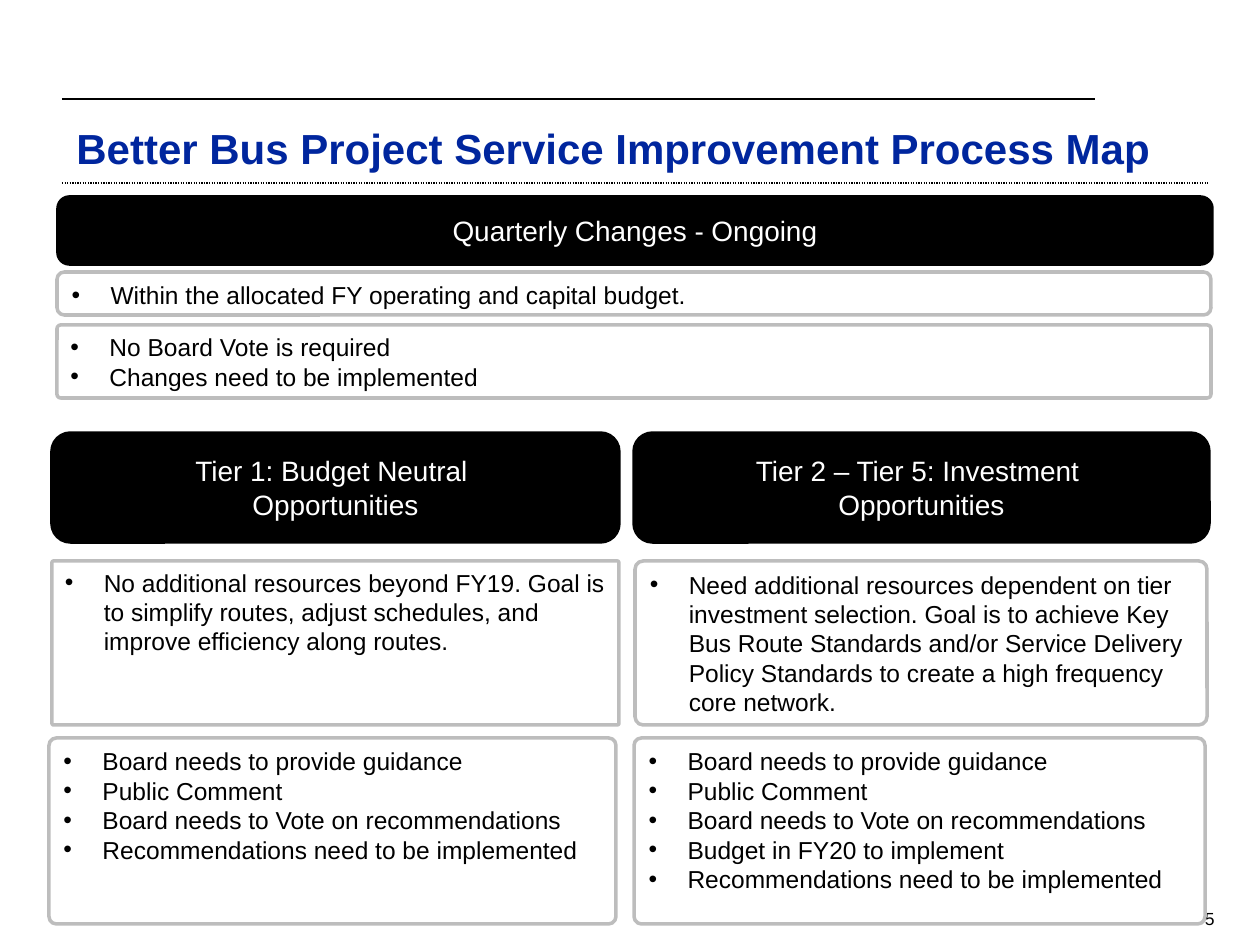
from dataclasses import dataclass

from lxml import etree
from pptx import Presentation
from pptx import util as u
from pptx.dml.color import RGBColor
from pptx.enum import dml, shapes, text
from pptx.oxml import ns

PX = 914400 / 126  # EMU in one px


@dataclass(frozen=True)
class Theme:
    font: str = "Arial"
    black: str = "000000"
    white: str = "FFFFFF"
    blue: str = "00269E"
    grey: str = "BDBDBD"
    title_pt: int = 24
    header_pt: int = 16
    body_pt: int = 14
    number_pt: int = 10
    border_pt: int = 2


@dataclass(frozen=True)
class Box:
    left: int
    top: int
    width: int
    height: int
    lines: tuple[str, ...]
    corner: float = 0.17


THEME = Theme()
INDENT = 39
HALF_WIDTH = 567

HEADERS = (
    Box(58, 197, 1154, 67, ("Quarterly Changes - Ongoing",)),
    Box(52, 433, HALF_WIDTH, 109, ("Tier 1: Budget Neutral ", "Opportunities")),
    Box(634, 433, 575, 109, ("Tier 2 – Tier 5: Investment ", "Opportunities")),
)

BOARD_STEPS = (
    "Board needs to provide guidance",
    "Public Comment",
    "Board needs to Vote on recommendations",
)
LAST_STEP = "Recommendations need to be implemented"

DETAILS = (
    # Quarterly changes
    Box(57, 325, 1154, 73,
        ("No Board Vote is required", "Changes need to be implemented"), 0.05),
    Box(57, 272, 1154, 43,
        ("Within the allocated FY operating and capital budget.",)),
    # Tier 1
    Box(52, 561, HALF_WIDTH, 164,
        ("No additional resources beyond FY19. Goal is to simplify routes, "
         "adjust schedules, and improve efficiency along routes.",), 0.01),
    Box(49, 738, HALF_WIDTH, 186, (*BOARD_STEPS, LAST_STEP), 0.04),
    # Tier 2 to tier 5
    Box(635, 561, 572, 164,
        ("Need additional resources dependent on tier investment selection. "
         "Goal is to achieve Key Bus Route Standards and/or Service Delivery "
         "Policy Standards to create a high frequency core network.",), 0.05),
    Box(634, 738, 571, 186,
        (*BOARD_STEPS, "Budget in FY20 to implement", LAST_STEP), 0.04),
)


def px(length: int) -> u.Emu:
    return u.Emu(round(length * PX))


def color(value: str) -> RGBColor:
    return RGBColor.from_string(value)


def add_bullet(paragraph) -> None:
    properties = paragraph._p.get_or_add_pPr()
    properties.set("marL", str(px(INDENT)))
    properties.set("indent", str(-px(INDENT)))
    etree.SubElement(properties, ns.qn("a:buFont"), typeface=THEME.font)
    etree.SubElement(properties, ns.qn("a:buChar"), char="•")


def write(frame, lines: tuple[str, ...], size: int, ink: str, align, anchor,
          bold: bool = False, bullets: bool = False) -> None:
    frame.word_wrap = True
    frame.vertical_anchor = anchor
    for index, line in enumerate(lines):
        paragraph = frame.paragraphs[0] if index == 0 else frame.add_paragraph()
        paragraph.text = line
        paragraph.alignment = align
        if bullets:
            add_bullet(paragraph)
        font = paragraph.font
        font.name, font.size, font.bold = THEME.font, u.Pt(size), bold
        font.color.rgb = color(ink)


def add_panel(slide, box: Box, fill: str, border: str):
    panel = slide.shapes.add_shape(
        shapes.MSO_SHAPE.ROUNDED_RECTANGLE,
        px(box.left), px(box.top), px(box.width), px(box.height))
    panel.adjustments[0] = box.corner
    panel.shadow.inherit = False
    panel.fill.solid()
    panel.fill.fore_color.rgb = color(fill)
    panel.line.color.rgb = color(border)
    panel.line.width = u.Pt(THEME.border_pt)
    return panel.text_frame


def add_label(slide, box: Box):
    return slide.shapes.add_textbox(
        px(box.left), px(box.top), px(box.width), px(box.height)).text_frame


def add_rule(slide, left: int, right: int, y: int, width: float, dash=None) -> None:
    rule = slide.shapes.add_connector(
        shapes.MSO_CONNECTOR.STRAIGHT, px(left), px(y), px(right), px(y))
    rule.line.color.rgb = color(THEME.black)
    rule.line.width = u.Pt(width)
    if dash is not None:
        rule.line.dash_style = dash
    etree.SubElement(rule._element.spPr, ns.qn("a:effectLst"))


def main() -> None:
    deck = Presentation()
    deck.slide_width, deck.slide_height = px(1260), px(945)
    slide = deck.slides.add_slide(deck.slide_layouts[6])
    align, anchor = text.PP_ALIGN, text.MSO_ANCHOR

    # Rules, page number and title
    add_rule(slide, 62, 1208, 183, 0.75, dml.MSO_LINE.ROUND_DOT)
    add_rule(slide, 62, 1095, 99, 1)
    number = Box(1123, 902, 104, 32, ("5",))
    write(add_label(slide, number), number.lines, THEME.number_pt, THEME.black,
          align.RIGHT, anchor.MIDDLE)
    title = Box(64, 115, 1144, 64,
                ("Better Bus Project Service Improvement Process Map",))
    write(add_label(slide, title), title.lines, THEME.title_pt, THEME.blue,
          align.LEFT, anchor.BOTTOM, bold=True)

    # Black headers
    for header in HEADERS:
        write(add_panel(slide, header, THEME.black, THEME.black), header.lines,
              THEME.header_pt, THEME.white, align.CENTER, anchor.MIDDLE)

    # Outlined boxes with bullets
    for detail in DETAILS:
        write(add_panel(slide, detail, THEME.white, THEME.grey), detail.lines,
              THEME.body_pt, THEME.black, align.LEFT, anchor.TOP, bullets=True)

    deck.save("out.pptx")


if __name__ == "__main__":
    main()
